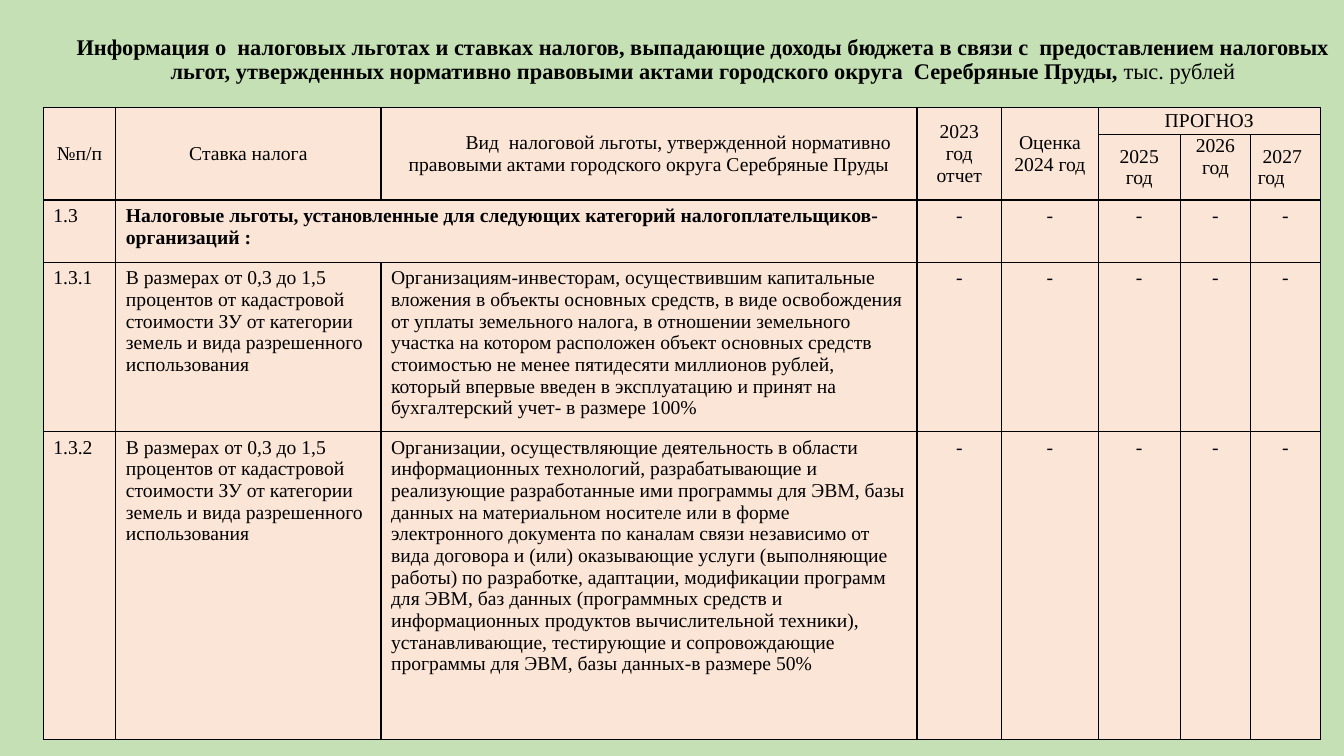
import pptx
import pptx.util
import pptx.dml.color
import pptx.enum.text
import pptx.oxml
import pptx.oxml.ns

Cm = pptx.util.Cm
ALIGN = pptx.enum.text.PP_ALIGN
ANCHOR = pptx.enum.text.MSO_ANCHOR
LEFT, CENTER = ALIGN.LEFT, ALIGN.CENTER
TOP, MIDDLE = ANCHOR.TOP, ANCHOR.MIDDLE


def color(code):
    return pptx.dml.color.RGBColor.from_string(code)


class Page:
    font = "Times New Roman"
    ink = "000000"
    paper = "C5E0B4"
    cream = "FBE5D6"

    def __init__(self, deck):
        self.slide = deck.slides.add_slide(deck.slide_layouts[5])
        self.slide.background.fill.solid()
        self.slide.background.fill.fore_color.rgb = color(self.paper)

    def style(self, run, size, bold=False):
        run.font.name = self.font
        run.font.size = pptx.util.Pt(size)
        run.font.bold = bold
        run.font.color.rgb = color(self.ink)

    def title(self, box, strong, plain):
        shape = self.slide.shapes.title
        shape.left, shape.top, shape.width, shape.height = map(Cm, box)
        frame = shape.text_frame
        frame.word_wrap = True
        frame.auto_size = pptx.enum.text.MSO_AUTO_SIZE.NONE
        frame.vertical_anchor = MIDDLE
        frame.margin_bottom = Cm(0.75)
        para = frame.paragraphs[0]
        para.alignment = CENTER
        para.line_spacing = 0.9
        for text, bold in ((strong, True), (plain, False)):
            run = para.add_run()
            run.text = text
            self.style(run, 16, bold)

    def table(self, left, top, cols, rows):
        frame = self.slide.shapes.add_table(
            len(rows), len(cols), Cm(left), Cm(top), Cm(sum(cols)), Cm(sum(rows)))
        grid = frame.table
        grid.first_row = grid.horz_banding = False
        for col, width in zip(grid.columns, cols):
            col.width = Cm(width)
        for row, height in zip(grid.rows, rows):
            row.height = Cm(height)
        for cell in grid.iter_cells():
            self.border(cell)
            cell.fill.solid()
            cell.fill.fore_color.rgb = color(self.cream)
        return grid

    def border(self, cell):
        props = cell._tc.get_or_add_tcPr()
        for side in ("lnL", "lnR", "lnT", "lnB"):
            props.append(pptx.oxml.parse_xml(
                f'<a:{side} {pptx.oxml.ns.nsdecls("a")} w="12700"><a:solidFill>'
                f'<a:srgbClr val="{self.ink}"/></a:solidFill></a:{side}>'))

    def cell(self, cell, text, align=LEFT, bold=False, indent=0):
        cell.text_frame.text = text
        for para in cell.text_frame.paragraphs:
            para.alignment = align
            if indent:
                para._p.get_or_add_pPr().set("indent", str(Cm(indent)))
            for run in para.runs:
                self.style(run, 14, bold)

    def head(self, cell, text, align=CENTER, anchor=MIDDLE, indent=0):
        self.cell(cell, text, align, indent=indent)
        cell.vertical_anchor = anchor
        cell.margin_left = cell.margin_right = Cm(0.18)
        cell.margin_top = cell.margin_bottom = 0


RATE = ("В размерах от 0,3 до 1,5 процентов от кадастровой стоимости ЗУ "
        "от категории земель и вида разрешенного использования")
HEADS = [
    ("№п/п", 0),
    ("Ставка налога", 0),
    ("Вид  налоговой льготы, утвержденной нормативно правовыми актами "
     "городского округа Серебряные Пруды", 1.48),
    ("2023 год\nотчет", 0),
    ("Оценка\n2024 год", 0),
]
YEARS = [
    ("2025 год", CENTER, MIDDLE, 0),
    ("2026 год", CENTER, TOP, 0),
    ("2027 год", LEFT, MIDDLE, 0.12),
]
BODY = [
    ("1.3", "Налоговые льготы, установленные для следующих категорий "
     "налогоплательщиков-организаций :", None),
    ("1.3.1", RATE,
     "Организациям-инвесторам, осуществившим капитальные вложения в объекты "
     "основных средств, в виде освобождения от уплаты земельного налога, в "
     "отношении земельного участка на котором расположен объект основных "
     "средств стоимостью не менее пятидесяти миллионов рублей, который впервые "
     "введен в эксплуатацию и принят на бухгалтерский учет- в размере 100%"),
    ("1.3.2", RATE,
     "Организации, осуществляющие деятельность в области информационных "
     "технологий, разрабатывающие и реализующие разработанные ими программы "
     "для ЭВМ, базы данных на материальном носителе или в форме электронного "
     "документа по каналам связи независимо от вида договора и (или) "
     "оказывающие услуги (выполняющие работы) по разработке, адаптации, "
     "модификации программ для ЭВМ, баз данных (программных средств и "
     "информационных продуктов вычислительной техники), устанавливающие, "
     "тестирующие и сопровождающие программы для ЭВМ, базы данных-в размере 50%"),
]


def main():
    deck = pptx.Presentation()
    deck.slide_width, deck.slide_height = Cm(33.87), Cm(19.05)
    page = Page(deck)

    # Title
    page.title((1.09, -0.36, 33.25, 4.39),
               "Информация о  налоговых льготах и ставках налогов, выпадающие "
               "доходы бюджета в связи с  предоставлением налоговых льгот, "
               "утвержденных нормативно правовыми актами городского округа  "
               "Серебряные Пруды, ", "тыс. рублей")

    # Table grid
    grid = page.table(1.09, 2.71,
                      (1.83, 6.68, 13.51, 2.13, 2.44, 2.06, 1.78, 1.75),
                      (0.69, 1.32, 1.57, 4.27, 7.75))

    # Header rows
    for col, (text, indent) in enumerate(HEADS):
        grid.cell(0, col).merge(grid.cell(1, col))
        page.head(grid.cell(0, col), text, indent=indent)
    first = len(HEADS)
    grid.cell(0, first).merge(grid.cell(0, first + len(YEARS) - 1))
    page.head(grid.cell(0, first), "ПРОГНОЗ")
    for col, year in enumerate(YEARS, first):
        page.head(grid.cell(1, col), *year)

    # Body rows
    for row, (code, rate, kind) in enumerate(BODY, 2):
        page.cell(grid.cell(row, 0), code)
        page.cell(grid.cell(row, 1), rate, bold=kind is None)
        if kind:
            page.cell(grid.cell(row, 2), kind)
        else:
            grid.cell(row, 1).merge(grid.cell(row, 2))
        for col in range(3, len(grid.columns)):
            page.cell(grid.cell(row, col), "-", CENTER)

    deck.save("out.pptx")


if __name__ == "__main__":
    main()
